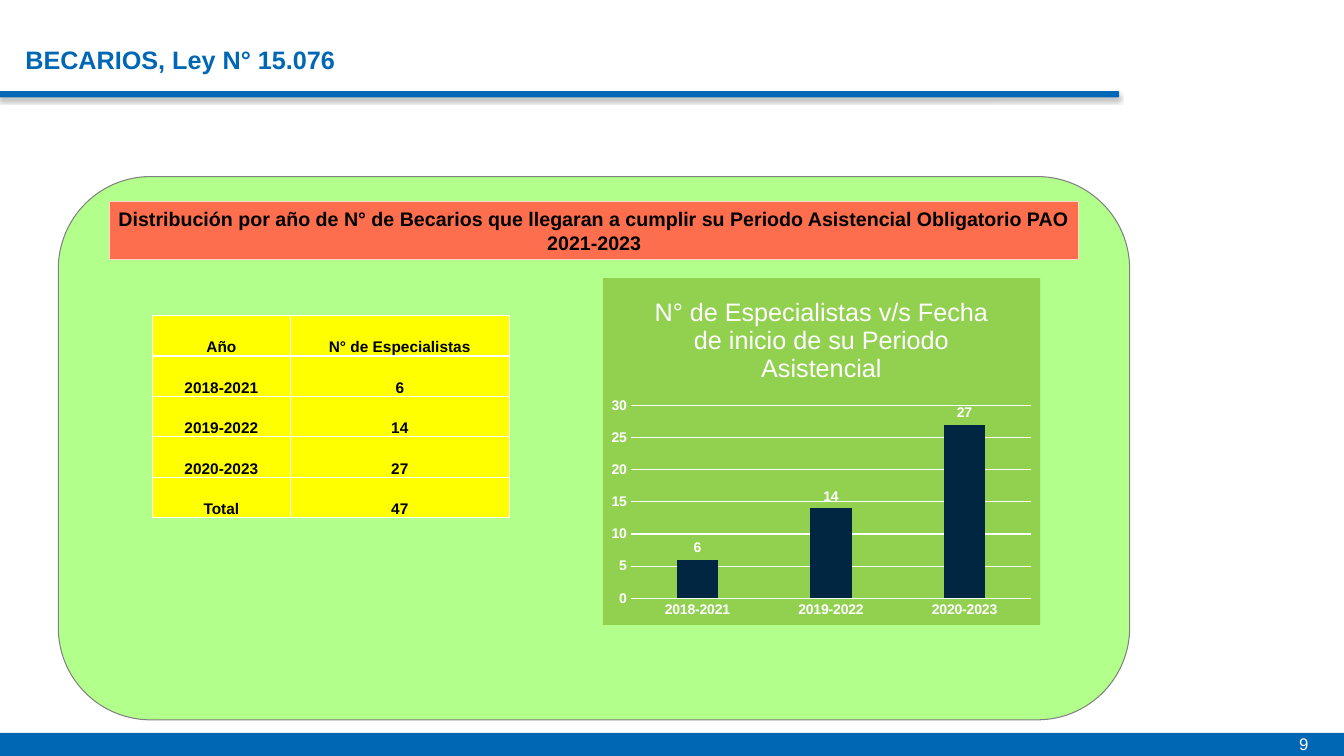
from dataclasses import dataclass

from lxml import etree
from pptx import Presentation
from pptx.chart.data import CategoryChartData
from pptx.dml.color import RGBColor
from pptx.enum.chart import XL_CHART_TYPE, XL_LABEL_POSITION, XL_TICK_MARK
from pptx.enum.shapes import MSO_SHAPE
from pptx.enum.text import MSO_ANCHOR, PP_ALIGN
from pptx.oxml import parse_xml
from pptx.oxml.ns import nsdecls, qn
from pptx.shapes.autoshape import Shape
from pptx.slide import Slide
from pptx.table import _Cell
from pptx.text.text import Font, TextFrame
from pptx.util import Cm, Pt

RECTANGLE = MSO_SHAPE.RECTANGLE
ROUNDED = MSO_SHAPE.ROUNDED_RECTANGLE
COLUMNS = XL_CHART_TYPE.COLUMN_CLUSTERED
OUTSIDE_END = XL_LABEL_POSITION.OUTSIDE_END
NO_TICK = XL_TICK_MARK.NONE
LEFT, CENTER = PP_ALIGN.LEFT, PP_ALIGN.CENTER
TOP, MIDDLE, BOTTOM = MSO_ANCHOR.TOP, MSO_ANCHOR.MIDDLE, MSO_ANCHOR.BOTTOM

FONT = "Arial"
COLORS = {
    "blue": "0067B4", "white": "FFFFFF", "black": "000000",
    "panel": "B2FF8B", "gray": "808080", "coral": "FC6E4D",
    "peach": "FFD6C7", "yellow": "FFFF00", "green": "92D050",
    "navy": "002642",
}
SPECIALISTS = {"2018-2021": 6, "2019-2022": 14, "2020-2023": 27}


@dataclass(frozen=True)
class Box:
    """Position and size in centimetres."""
    left: float
    top: float
    width: float
    height: float

    def lengths(self) -> tuple[Cm, Cm, Cm, Cm]:
        return Cm(self.left), Cm(self.top), Cm(self.width), Cm(self.height)


@dataclass(frozen=True)
class Block:
    box: Box
    preset: MSO_SHAPE
    fill: str
    line: str | None = None
    corner: float | None = None


@dataclass(frozen=True)
class Label:
    text: str
    size: float
    color: str
    bold: bool = False
    align: PP_ALIGN = LEFT
    anchor: MSO_ANCHOR = TOP


HEADER_RULE = Block(Box(0, 2.31, 28.19, 0.13), ROUNDED, "blue", "blue", 0.12)
FOOTER_BAR = Block(Box(0, 18.47, 33.87, 0.58), RECTANGLE, "blue")
PANEL = Block(Box(1.47, 4.45, 27, 13.69), ROUNDED, "panel", "gray", 0.17)
BANNER = Block(Box(2.77, 5.08, 24.41, 1.47), RECTANGLE, "coral", "peach")
TITLE_BOX = Box(0.64, 1.12, 26.92, 1.57)
NUMBER_BOX = Box(32.49, 18.36, 1.37, 0.69)
CHART_BOX = Box(15.19, 7.01, 11.02, 8.74)
TABLE_BOX = Box(3.84, 7.95, 8.99, 5.1)
TABLE_COLUMNS = (3.48, 5.51)


def rgb(name: str) -> RGBColor:
    return RGBColor.from_string(COLORS[name])


def set_font(font: Font, size: float, color: str, bold: bool) -> None:
    font.name = FONT
    font.size = Pt(size)
    font.bold = bold
    font.color.rgb = rgb(color)


def write(frame: TextFrame, label: Label) -> None:
    frame.word_wrap = True
    frame.vertical_anchor = label.anchor
    paragraph = frame.paragraphs[0]
    paragraph.text = label.text
    paragraph.alignment = label.align
    set_font(paragraph.font, label.size, label.color, label.bold)


def add_block(slide: Slide, block: Block) -> Shape:
    shape = slide.shapes.add_shape(block.preset, *block.box.lengths())
    if block.corner is not None:
        shape.adjustments[0] = block.corner
    shape.fill.solid()
    shape.fill.fore_color.rgb = rgb(block.fill)
    if block.line:
        shape.line.color.rgb = rgb(block.line)
        shape.line.width = Pt(0.75)
    else:
        shape.line.fill.background()
    shape.shadow.inherit = False
    return shape


def add_shadow(shape: Shape) -> None:
    effects = shape._element.spPr.find(qn("a:effectLst"))
    effects.append(parse_xml(
        f'<a:outerShdw {nsdecls("a")} blurRad="{Pt(3.1)}" dist="{Pt(1.8)}" '
        f'dir="5400000" rotWithShape="0"><a:srgbClr val="{COLORS["black"]}">'
        '<a:alpha val="35000"/></a:srgbClr></a:outerShdw>'))


def add_label(slide: Slide, box: Box, label: Label) -> TextFrame:
    frame = slide.shapes.add_textbox(*box.lengths()).text_frame
    write(frame, label)
    return frame


def set_margins(target: TextFrame | _Cell, margin: float) -> None:
    target.margin_left = target.margin_right = Cm(margin)
    target.margin_top = target.margin_bottom = Cm(margin)


def add_borders(cell: _Cell) -> None:
    properties = cell._tc.get_or_add_tcPr()
    for side in ("a:lnL", "a:lnR", "a:lnT", "a:lnB"):
        border = etree.SubElement(properties, qn(side), w=str(Pt(1)))
        fill = etree.SubElement(border, qn("a:solidFill"))
        etree.SubElement(fill, qn("a:srgbClr"), val=COLORS["white"])


def add_specialist_table(slide: Slide) -> None:
    rows = [("Año", "N° de Especialistas"), *SPECIALISTS.items(),
            ("Total", sum(SPECIALISTS.values()))]
    table = slide.shapes.add_table(
        len(rows), len(TABLE_COLUMNS), *TABLE_BOX.lengths()).table
    table.first_row = table.horz_banding = False
    for column, width in zip(table.columns, TABLE_COLUMNS):
        column.width = Cm(width)
    for row_index, row in enumerate(rows):
        for column_index, value in enumerate(row):
            cell = table.cell(row_index, column_index)
            add_borders(cell)
            cell.fill.solid()
            cell.fill.fore_color.rgb = rgb("yellow")
            set_margins(cell, 0.02)
            cell.margin_bottom = 0
            write(cell.text_frame, Label(str(value), 11, "black", True, CENTER))
            cell.vertical_anchor = BOTTOM


def add_specialist_chart(slide: Slide) -> None:
    data = CategoryChartData()
    data.categories = list(SPECIALISTS)
    data.add_series("N° de Especialistas", list(SPECIALISTS.values()))
    chart = slide.shapes.add_chart(COLUMNS, *CHART_BOX.lengths(), data).chart
    set_font(chart.font, 10, "white", True)
    chart.has_legend = False
    write(chart.chart_title.text_frame, Label(
        "N° de Especialistas v/s Fecha de inicio de su Periodo Asistencial",
        18, "white", align=CENTER))
    chart.chart_title.include_in_layout = False

    # Chart background
    background = parse_xml(
        f'<c:spPr {nsdecls("c", "a")}><a:solidFill>'
        f'<a:srgbClr val="{COLORS["green"]}"/></a:solidFill>'
        '<a:ln><a:noFill/></a:ln></c:spPr>')
    chart._chartSpace.find(qn("c:chart")).addnext(background)

    # Axes
    category_axis, value_axis = chart.category_axis, chart.value_axis
    for axis in (category_axis, value_axis):
        axis.major_tick_mark = axis.minor_tick_mark = NO_TICK
    value_axis.minimum_scale, value_axis.maximum_scale = 0, 30
    value_axis.major_unit = 5
    value_axis.format.line.fill.background()
    for line in (category_axis.format.line, value_axis.major_gridlines.format.line):
        line.color.rgb = rgb("white")
        line.width = Pt(0.75)

    # Columns and their values
    plot = chart.plots[0]
    plot.gap_width, plot.overlap = 219, -27
    plot.vary_by_categories = False
    series = plot.series[0]
    series.format.fill.solid()
    series.format.fill.fore_color.rgb = rgb("navy")
    labels = series.data_labels
    labels.show_value = True
    labels.position = OUTSIDE_END
    set_font(labels.font, 10, "white", True)


def main() -> None:
    presentation = Presentation()
    presentation.slide_width, presentation.slide_height = Cm(33.87), Cm(19.05)
    slide = presentation.slides.add_slide(presentation.slide_layouts[6])

    # Header and footer
    add_shadow(add_block(slide, HEADER_RULE))
    add_block(slide, FOOTER_BAR)
    title = add_label(slide, TITLE_BOX, Label(
        "BECARIOS, Ley N° 15.076", 18, "blue", True))
    set_margins(title, 0)
    add_label(slide, NUMBER_BOX, Label("9", 12, "white"))

    # Panel with chart, table and banner
    add_block(slide, PANEL)
    add_specialist_chart(slide)
    add_specialist_table(slide)
    banner = add_block(slide, BANNER).text_frame
    set_margins(banner, 0.2)
    write(banner, Label(
        "Distribución por año de N° de Becarios que llegaran a cumplir su "
        "Periodo Asistencial Obligatorio PAO 2021-2023",
        14, "black", True, CENTER, MIDDLE))

    presentation.save("out.pptx")


if __name__ == "__main__":
    main()
